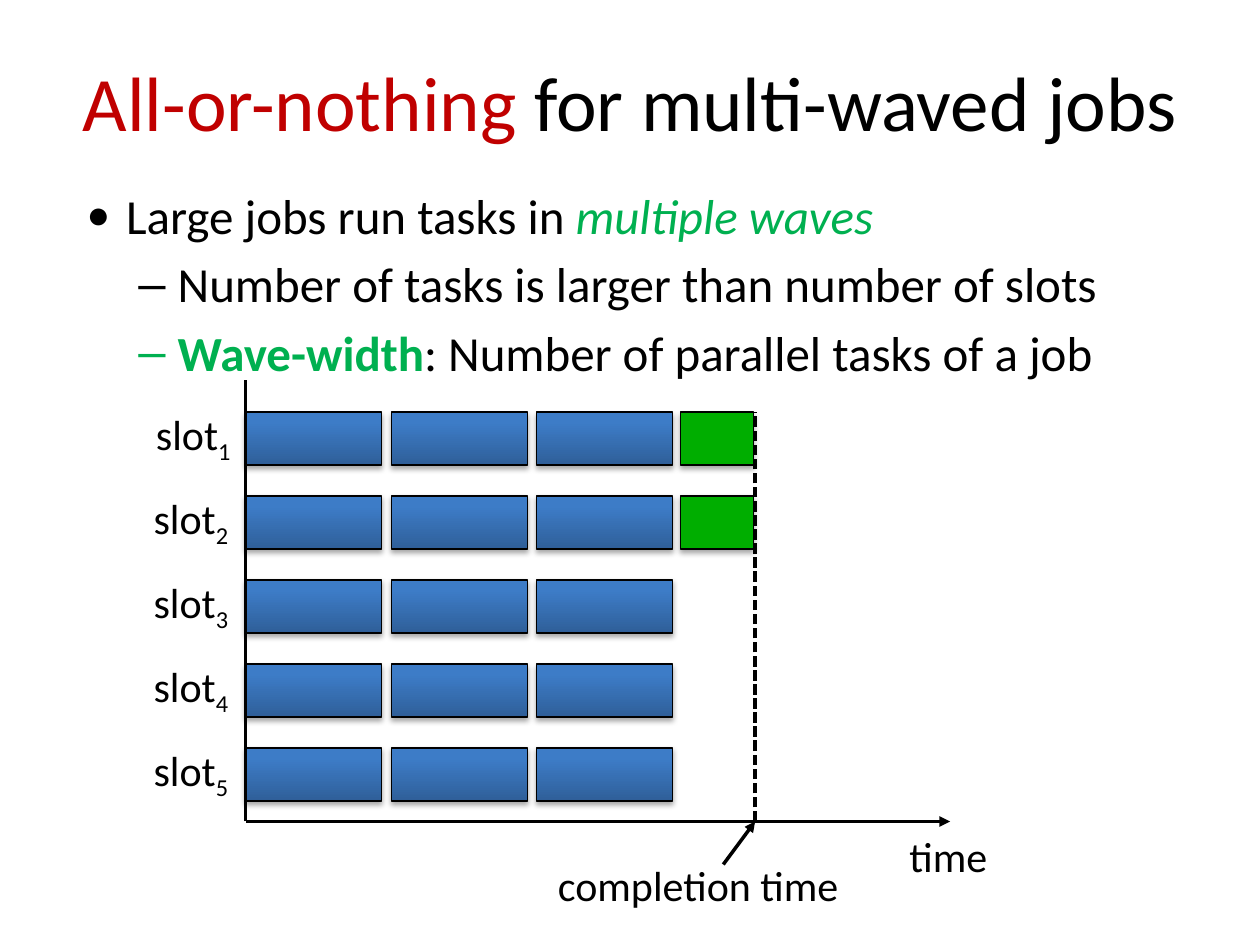
from lxml import etree
from pptx import Presentation
from pptx import util as u
from pptx.dml.color import RGBColor
from pptx.enum import dml, shapes, text
from pptx.oxml import parse_xml
from pptx.oxml.ns import nsdecls, qn

HUES = {"ink": "000000", "red": "C00000", "leaf": "00B050",
        "green": "00AE00", "deep": "2F5F99", "sky": "3D7CC7"}
SHADE = (f'<a:effectLst {nsdecls("a")}>'
         '<a:outerShdw blurRad="40000" dist="23000" dir="5400000" rotWithShape="0">'
         '<a:srgbClr val="000000"><a:alpha val="35000"/></a:srgbClr>'
         '</a:outerShdw></a:effectLst>')


def hue(name):
    return RGBColor.from_string(HUES[name])


def points(*vals):
    return [u.Pt(v) for v in vals]


class Deck:
    def __init__(self, wide, high):
        self.prs = Presentation()
        self.prs.slide_width, self.prs.slide_height = points(wide, high)
        self.slide = self.prs.slides.add_slide(self.prs.slide_layouts[6])
        self.face = "Calibri"

    def label(self, box, paras, size=24, wrap=False, **form):
        """Each paragraph is a list of (words, format) runs; form goes to all paragraphs."""
        frame = self.slide.shapes.add_textbox(*points(*box)).text_frame
        frame.word_wrap = wrap
        for i, runs in enumerate(paras):
            para = frame.paragraphs[0] if i == 0 else frame.add_paragraph()
            for key, val in form.items():
                setattr(para, key, val)
            for words, style in runs:
                self.run(para, words, size, **style)
        return frame

    def run(self, para, words, size, color="ink", sub=False, **form):
        run = para.add_run()
        run.text = words
        form = {"name": self.face, "size": u.Pt(size), **form}
        for key, val in form.items():
            setattr(run.font, key, val)
        run.font.color.rgb = hue(color)
        if sub:
            run.font._element.set("baseline", "-25000")

    def bullet(self, para, mark, left, hang, scale=100):
        props = para._p.get_or_add_pPr()
        props.set("marL", str(u.Pt(left)))
        props.set("indent", str(-u.Pt(hang)))
        etree.SubElement(props, qn("a:buSzPct")).set("val", str(scale * 1000))
        etree.SubElement(props, qn("a:buFont")).set("typeface", "Arial")
        etree.SubElement(props, qn("a:buChar")).set("char", mark)

    def task(self, box, *fills):
        """One fill is solid; two run from bottom to top."""
        rect = self.slide.shapes.add_shape(shapes.MSO_SHAPE.RECTANGLE, *points(*box))
        if len(fills) == 1:
            rect.fill.solid()
            rect.fill.fore_color.rgb = hue(fills[0])
        else:
            rect.fill.gradient()
            rect.fill.gradient_angle = 90
            for stop, name, pos in zip(rect.fill.gradient_stops, fills, (0, 0.8)):
                stop.color.rgb = hue(name)
                stop.position = pos
        rect.line.color.rgb = hue("ink")
        rect.line.width = u.Pt(0.75)
        rect._element.spPr.append(parse_xml(SHADE))

    def line(self, ends, dash=None, arrow=False):
        link = self.slide.shapes.add_connector(
            shapes.MSO_CONNECTOR.STRAIGHT, *points(*ends))
        form = {"width": u.Pt(2), "dash_style": dash}
        for key, val in form.items():
            setattr(link.line, key, val)
        link.line.color.rgb = hue("ink")
        if arrow:
            tail = etree.SubElement(link.line._get_or_add_ln(), qn("a:tailEnd"))
            tail.set("type", "triangle")
        etree.SubElement(link._element.spPr, qn("a:effectLst"))


def main():
    deck = Deck(720, 540)

    title = deck.label((36, 12.24, 648, 90), [[
        ("All-or-nothing ", {"color": "red"}), ("for multi-waved jobs", {})]],
        size=44, wrap=True, alignment=text.PP_ALIGN.CENTER)
    title.vertical_anchor = text.MSO_ANCHOR.MIDDLE

    # Chart of slots over time
    left, top, base, end = 140.4, 235.44, 469.44, 431.5
    wide, high, small = 77.76, 30.24, 41.76
    step, drop = 83.16, 48
    for row in range(5):
        y = top + row * drop
        for col in range(3):
            deck.task((left + col * step, y, wide, high), "deep", "sky")
        if row < 2:
            deck.task((388.8, y, small, high), "green")
        x = 82 if row == 0 else 80.64
        deck.label((x, y - 5.76, 58.3, 36), [[
            ("slot", {}), (str(row + 1), {"sub": True})]])

    deck.line((end, base, end, top), dash=dml.MSO_LINE.SQUARE_DOT)
    deck.line((413.3, 494, end, base), arrow=True)
    deck.line((left, base, left, 217.44))
    deck.line((left, base, 542.9, base), arrow=True)
    deck.label((512.64, 470.88, 59.76, 36), [[("time", {})]])
    deck.label((311.76, 487.44, 176.4, 36), [[("completion time", {})]])

    body = deck.label((36, 102.24, 648, 118), [
        [("Large jobs run tasks in ", {}),
         ("multiple waves", {"color": "leaf", "italic": True})],
        [("Number of tasks is larger than number of slots", {})],
        [("Wave-width", {"color": "leaf", "bold": True}),
         (": Number of parallel tasks of a job", {})],
    ], size=28, wrap=True, space_before=u.Pt(5.6))
    first, *rest = body.paragraphs
    deck.bullet(first, "●", 29, 22.5, 80)
    for para in rest:
        deck.bullet(para, "–", 58.5, 22.5)

    deck.prs.save("out.pptx")


if __name__ == "__main__":
    main()
